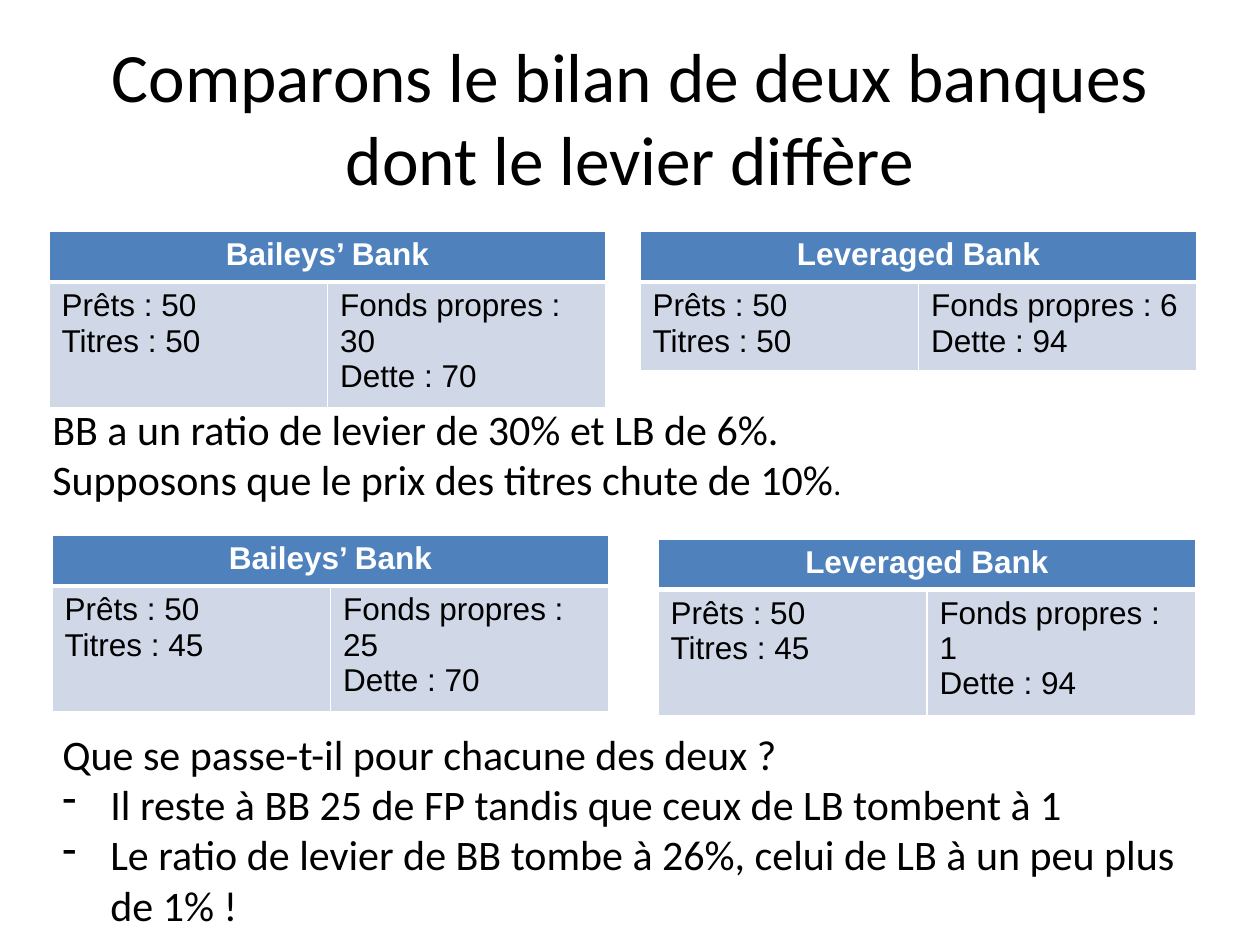
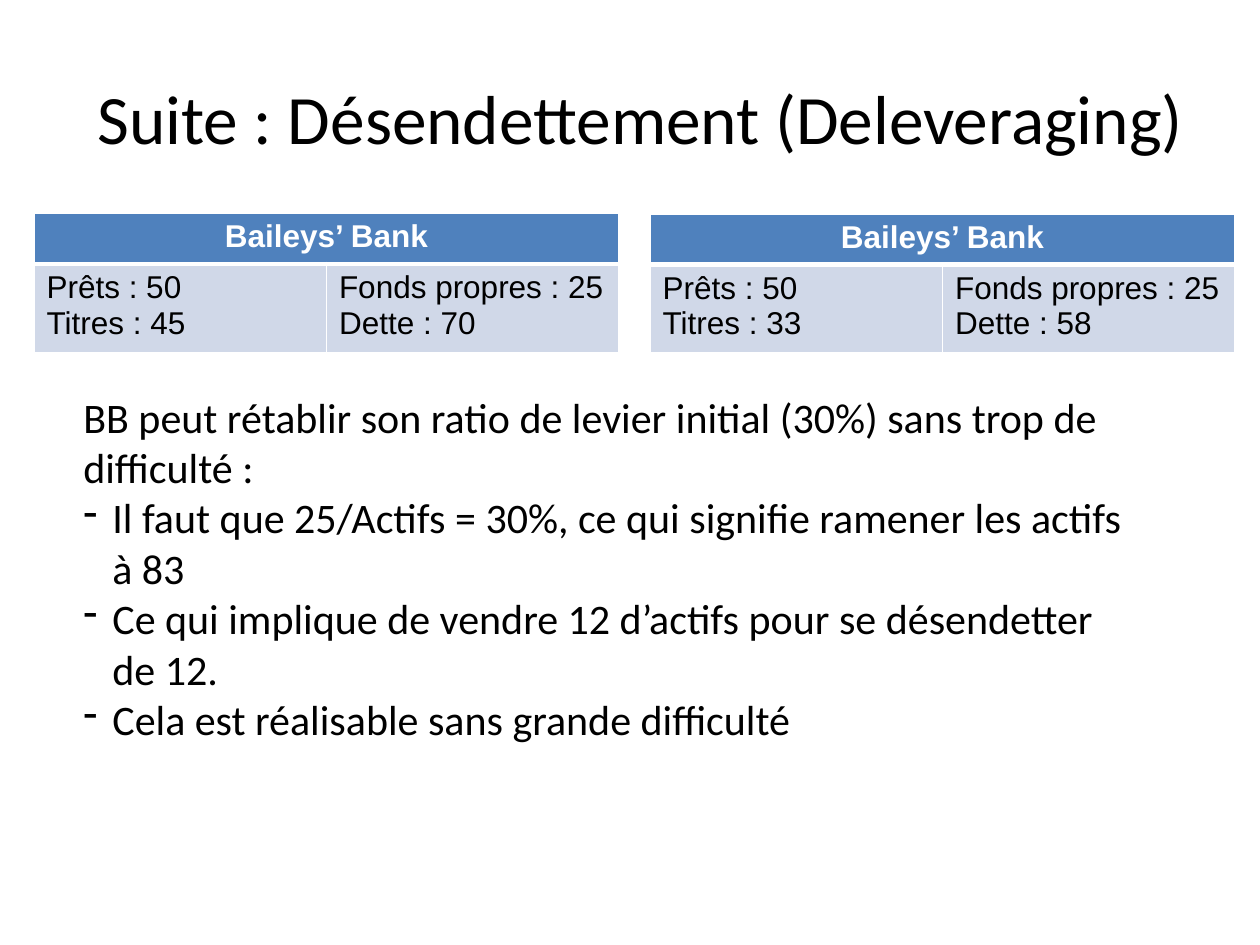
from dataclasses import dataclass

from lxml.etree import SubElement
from pptx import Presentation
from pptx.dml.color import RGBColor as Rgb
from pptx.enum.text import MSO_ANCHOR as Anchor, PP_ALIGN as Align
from pptx.oxml import parse_xml
from pptx.oxml.ns import nsdecls, qn
from pptx.util import Pt

PX = 914400 / 126


@dataclass(frozen=True)
class Theme:
    ink: str = "000000"
    paper: str = "FFFFFF"
    band: str = "4F81BD"
    body: str = "D0D8E8"
    font: str = "Calibri"
    grid: str = "Arial"
    head: float = 39.6
    text: float = 24
    small: float = 18
    thin: float = 1
    thick: float = 3


THEME = Theme()
BB, LB = "Baileys’ Bank", "Leveraged Bank"

# Sheets: bank, (left, top, width), (header, body heights), loans, bonds, equity, debt.
# Notes: box, hanging indent, lines; "- " starts a bullet, a pair ends in small type.
SLIDES = [
    {
        "title": ("Comparons le bilan de deux banques dont le levier diffère",
                  (63, 38, 1134, 157)),
        "sheets": [
            (BB, (49, 231, 557), (51, 118), 50, 50, 30, 70),
            (LB, (640, 231, 557), (51, 83), 50, 50, 6, 94),
            (BB, (52, 535, 557), (51, 125), 50, 45, 25, 70),
            (LB, (658, 539, 538), (50, 126), 50, 45, 1, 94),
        ],
        "notes": [
            ((40, 397, 1071, 115), 0, [
                "BB a un ratio de levier de 30% et LB de 6%.",
                ("Supposons que le prix des titres chute de 10%", "."),
            ]),
            ((50, 722, 1147, 217), 48, [
                "Que se passe-t-il pour chacune des deux ?",
                "- Il reste à BB 25 de FP tandis que ceux de LB tombent à 1",
                "- Le ratio de levier de BB tombe à 26%, celui de LB à un peu "
                "plus de 1% !",
            ]),
        ],
    },
    {
        "title": ("Suite : Désendettement (Deleveraging)", (63, 38, 1155, 157)),
        "sheets": [
            (BB, (34, 213, 585), (51, 83), 50, 45, 25, 70),
            (BB, (650, 214, 585), (50, 87), 50, 33, 25, 58),
        ],
        "notes": [
            ((71, 385, 1071, 365), 29, [
                "BB peut rétablir son ratio de levier initial (30%) sans trop "
                "de difficulté :",
                "- Il faut que 25/Actifs = 30%, ce qui signifie ramener les "
                "actifs à 83",
                "- Ce qui implique de vendre 12 d’actifs pour se désendetter "
                "de 12.",
                "- Cela est réalisable sans grande difficulté",
            ]),
        ],
    },
]


def emu(*sizes):
    return [round(size * PX) for size in sizes]


def style(para, font, size, color, bold=False, align=Align.LEFT):
    para.alignment = align
    para.font.name, para.font.size, para.font.bold = font, Pt(size), bold
    para.font.color.rgb = Rgb.from_string(color)


def paras(frame, count):
    return [frame.paragraphs[0]] + [frame.add_paragraph() for _ in range(count - 1)]


def add_box(slide, box):
    frame = slide.shapes.add_textbox(*emu(*box)).text_frame
    frame.word_wrap = True
    return frame


def add_title(slide, text, box):
    frame = add_box(slide, box)
    frame.vertical_anchor = Anchor.MIDDLE
    para = frame.paragraphs[0]
    para.text = text
    style(para, THEME.font, THEME.head, THEME.ink, align=Align.CENTER)


def hang(para, indent):
    """Give the paragraph a dash bullet with a hanging indent in px."""
    props = para._p.get_or_add_pPr()
    step = emu(indent)[0]
    props.set("marL", str(step))
    props.set("indent", str(-step))
    dash = SubElement(props, qn("a:buChar"))
    dash.set("char", "-")
    props.insert(0, dash)


def add_note(slide, box, indent, lines):
    frame = add_box(slide, box)
    for para, line in zip(paras(frame, len(lines)), lines):
        text, tail = (line, "") if isinstance(line, str) else line
        para.text = text.removeprefix("- ")
        style(para, THEME.font, THEME.text, THEME.ink)
        if text.startswith("- "):
            hang(para, indent)
        if tail:
            run = para.add_run()
            run.text, run.font.size = tail, Pt(THEME.small)


def paint(cell, fill, top, base):
    """Fill the cell and rule its edges in the paper colour."""
    cell.fill.solid()
    cell.fill.fore_color.rgb = Rgb.from_string(fill)
    props = cell._tc.get_or_add_tcPr()
    edges = {"L": THEME.thin, "R": THEME.thin, "T": top, "B": base}
    for spot, (side, width) in enumerate(edges.items()):
        props.insert(spot, parse_xml(
            f'<a:ln{side} {nsdecls("a")} w="{Pt(width)}"><a:solidFill>'
            f'<a:srgbClr val="{THEME.paper}"/></a:solidFill></a:ln{side}>'))


def fill_cell(cell, lines, *look, **more):
    frame = cell.text_frame
    for para, line in zip(paras(frame, len(lines)), lines):
        para.text = line
        style(para, THEME.grid, THEME.small, *look, **more)


def add_sheet(slide, bank, place, rows, loans, bonds, funds, debt):
    left, top, width = place
    table = slide.shapes.add_table(
        2, 2, *emu(left, top, width, sum(rows))).table
    table.horz_banding = False
    for row, height in zip(table.rows, emu(*rows)):
        row.height = height
    sides = ([f"Prêts : {loans}", f"Titres : {bonds}"],
             [f"Fonds propres : {funds}", f"Dette : {debt}"])
    for col, lines in enumerate(sides):
        paint(table.cell(0, col), THEME.band, THEME.thin, THEME.thick)
        cell = table.cell(1, col)
        paint(cell, THEME.body, THEME.thick, THEME.thin)
        fill_cell(cell, lines, THEME.ink)
    head = table.cell(0, 0)
    head.merge(table.cell(0, 1))
    fill_cell(head, [bank], THEME.paper, bold=True, align=Align.CENTER)


def main():
    deck = Presentation()
    deck.slide_width, deck.slide_height = emu(1260, 945)
    for page in SLIDES:
        slide = deck.slides.add_slide(deck.slide_layouts[6])
        add_title(slide, *page["title"])
        for sheet in page["sheets"]:
            add_sheet(slide, *sheet)
        for note in page["notes"]:
            add_note(slide, *note)
    deck.save("out.pptx")


if __name__ == "__main__":
    main()
